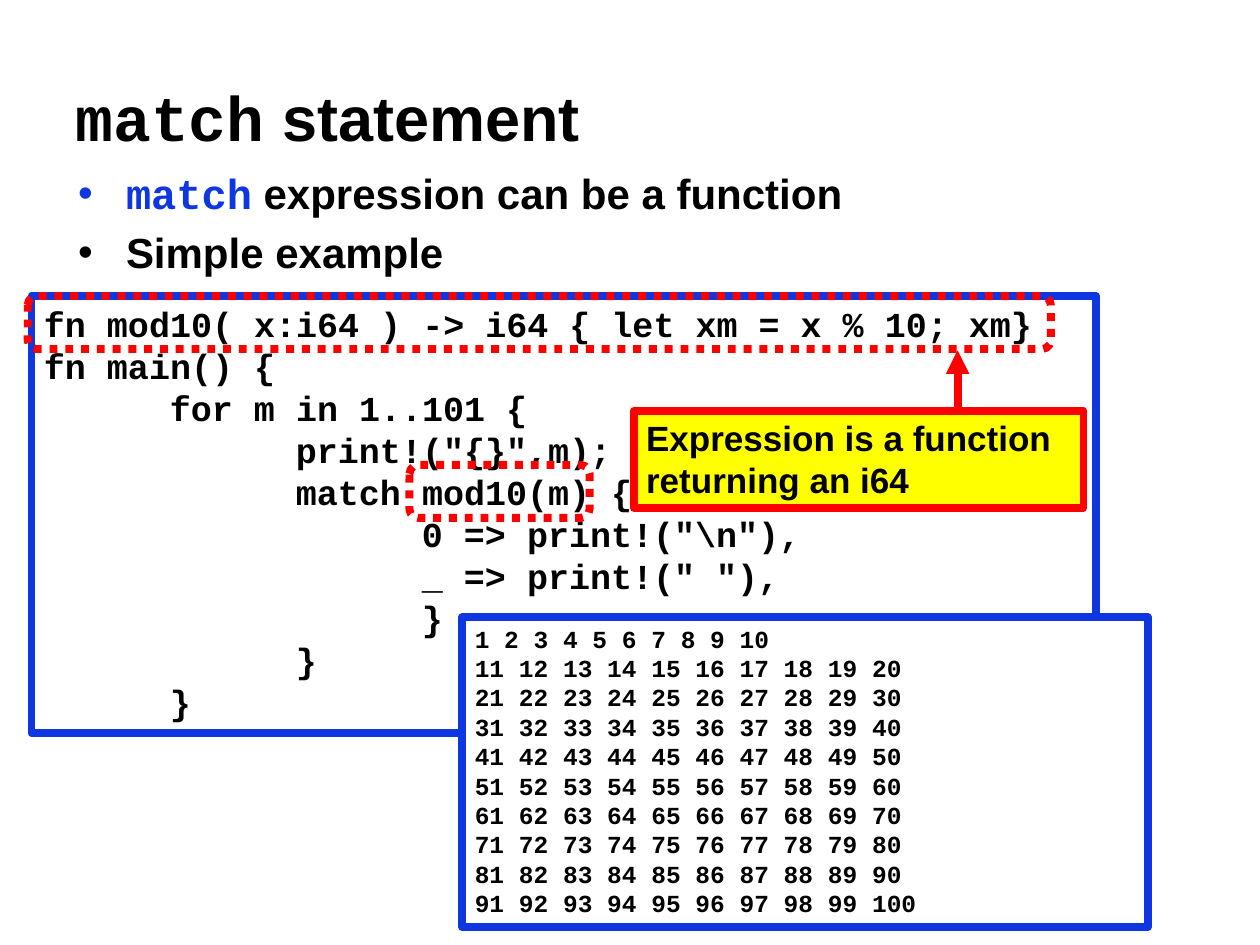
from dataclasses import dataclass

from lxml import etree
from pptx import Presentation
from pptx.dml.color import RGBColor as RGB
from pptx.enum.dml import MSO_LINE
from pptx.enum.shapes import MSO_CONNECTOR, MSO_SHAPE
from pptx.enum.text import MSO_ANCHOR, PP_ALIGN
from pptx.oxml.ns import qn
from pptx.util import Inches, Pt


@dataclass(frozen=True)
class Theme:
    sans: str = "Arial"
    mono: str = "Courier New"
    black: RGB = RGB(0x00, 0x00, 0x00)
    blue: RGB = RGB(0x0F, 0x37, 0xE1)
    red: RGB = RGB(0xFF, 0x00, 0x00)
    yellow: RGB = RGB(0xFF, 0xFF, 0x00)
    white: RGB = RGB(0xFF, 0xFF, 0xFF)
    title_size: int = 36
    body_size: int = 24
    code_size: int = 20
    output_size: int = 14
    line_width: float = 4.5


class SlideBuilder:
    def __init__(self, prs, theme):
        self.theme = theme
        self.slide = prs.slides.add_slide(prs.slide_layouts[1])

    def style_run(self, r, size, font, color=None):
        r.font.size = Pt(size)
        r.font.name = font
        r.font.bold = True
        r.font.color.rgb = color or self.theme.black

    def add_runs(self, p, parts, size):
        for text, font, color in parts:
            r = p.add_run()
            r.text = text
            self.style_run(r, size, font, color)

    def place(self, sp, box):
        sp.left, sp.top, sp.width, sp.height = map(Inches, box)

    def title(self, box, parts):
        sp = self.slide.shapes.title
        self.place(sp, box)
        tf = sp.text_frame
        tf.vertical_anchor = MSO_ANCHOR.MIDDLE
        p = tf.paragraphs[0]
        p.alignment = PP_ALIGN.LEFT
        self.add_runs(p, parts, self.theme.title_size)

    def bullets(self, box, items):
        sp = self.slide.placeholders[1]
        self.place(sp, box)
        tf = sp.text_frame
        for i, parts in enumerate(items):
            p = tf.add_paragraph() if i else tf.paragraphs[0]
            pPr = p._p.get_or_add_pPr()
            pPr.set("marL", str(Inches(0.38)))
            pPr.set("indent", str(-Inches(0.38)))
            self.add_runs(p, parts, self.theme.body_size)

    def frame(self, box, line, fill=None, kind=MSO_SHAPE.RECTANGLE, dash=None):
        sp = self.slide.shapes.add_shape(kind, *map(Inches, box))
        sp.shadow.inherit = False
        if fill is None:
            sp.fill.background()
        else:
            sp.fill.solid()
            sp.fill.fore_color.rgb = fill
        sp.line.color.rgb = line
        sp.line.width = Pt(self.theme.line_width)
        if dash is not None:
            sp.line.dash_style = dash
        return sp

    def highlight(self, box):
        self.frame(box, self.theme.red, kind=MSO_SHAPE.ROUNDED_RECTANGLE,
                   dash=MSO_LINE.ROUND_DOT)

    def text_box(self, box, lines, size, font, line, fill=None):
        tf = self.frame(box, line, fill).text_frame
        tf.word_wrap = True
        tf.vertical_anchor = MSO_ANCHOR.TOP
        tf.text = "\n".join(lines)
        for p in tf.paragraphs:
            p.alignment = PP_ALIGN.LEFT
            if "\t" in p.text:
                self.tab_stops(p)
            for r in p.runs:
                self.style_run(r, size, font)

    def tab_stops(self, p):
        tabs = etree.SubElement(p._p.get_or_add_pPr(), qn("a:tabLst"))
        for inch in (1, 2, 3):
            etree.SubElement(tabs, qn("a:tab"), pos=str(Inches(inch)), algn="l")

    def arrow(self, start, end):
        cn = self.slide.shapes.add_connector(
            MSO_CONNECTOR.STRAIGHT, *map(Inches, start + end))
        cn.line.color.rgb = self.theme.red
        cn.line.width = Pt(self.theme.line_width)
        etree.SubElement(cn.line._get_or_add_ln(), qn("a:tailEnd"), type="triangle")
        etree.SubElement(cn._element.spPr, qn("a:effectLst"))


def main():
    prs = Presentation()
    prs.slide_width, prs.slide_height = Inches(10), Inches(7.5)
    t = Theme()
    s = SlideBuilder(prs, t)

    s.title((0.5, 0.3, 9, 1.25),
            [("match", t.mono, t.black), (" statement", t.sans, t.black)])
    s.bullets((0.52, 1.28, 9, 4.95), [
        [("match", t.mono, t.blue),
         (" expression can be a function", t.sans, t.black)],
        [("Simple example", t.sans, t.black)],
    ])

    code = [
        (0, "fn mod10( x:i64 ) -> i64 { let xm = x % 10; xm}"),
        (0, "fn main() {"),
        (1, "for m in 1..101 {"),
        (2, 'print!("{}",m);'),
        (2, "match mod10(m) {"),
        (3, '0 => print!("\\n"),'),
        (3, '_ => print!(" "),'),
        (3, "}"),
        (2, "}"),
        (1, "}"),
    ]
    s.text_box((0.25, 2.35, 8.45, 3.47),
               ["\t" * depth + text for depth, text in code],
               t.code_size, t.mono, t.blue)
    s.highlight((3.25, 3.69, 1.43, 0.42))
    s.text_box((5.03, 3.26, 3.57, 0.77),
               ["Expression is a function returning an i64"],
               t.code_size, t.sans, t.red, t.yellow)
    s.highlight((0.22, 2.35, 8.12, 0.42))

    rows = [" ".join(str(n) for n in range(first, first + 10))
            for first in range(1, 101, 10)]
    s.text_box((3.67, 4.9, 5.44, 2.46), rows,
               t.output_size, t.mono, t.blue, t.white)
    s.arrow((7.6, 3.24), (7.6, 2.78))

    prs.save("out.pptx")


if __name__ == "__main__":
    main()
